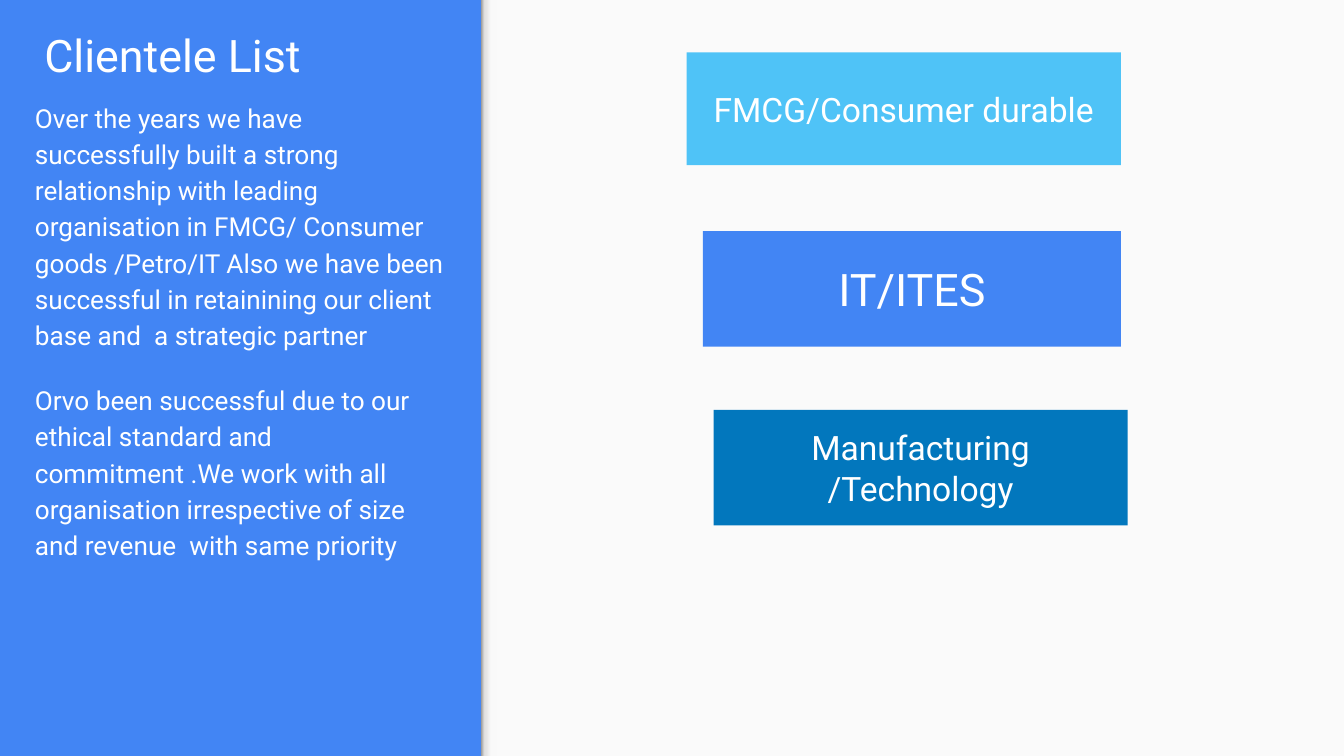
import copy
import pptx
import pptx.util
import pptx.dml.color
import pptx.enum.shapes
import pptx.enum.text
import pptx.oxml.ns

Inches = pptx.util.Inches
Pt = pptx.util.Pt
ALIGN = pptx.enum.text.PP_ALIGN
ANCHOR = pptx.enum.text.MSO_ANCHOR
qn = pptx.oxml.ns.qn


def color(code):
    return pptx.dml.color.RGBColor.from_string(code)


def write(shape, lines, size, align, anchor):
    frame = shape.text_frame
    frame.word_wrap = True
    frame.auto_size = pptx.enum.text.MSO_AUTO_SIZE.NONE
    frame.vertical_anchor = anchor
    frame.margin_left = frame.margin_right = Inches(0.1)
    frame.margin_top = frame.margin_bottom = Inches(0.1)
    frame.text = "\n".join(lines)
    for para in frame.paragraphs:
        para.alignment = align
        para.space_before = Pt(0)
        para.font.size = Pt(size)
        para.font.name = "Roboto"
        para.font.color.rgb = color("FFFFFF")


wide = 10
tall = wide * 9 / 16
deck = pptx.Presentation()
deck.slide_width = Inches(wide)
deck.slide_height = Inches(tall)
slide = deck.slides.add_slide(deck.slide_layouts[1])
slide.background.fill.solid()
slide.background.fill.fore_color.rgb = color("4285F4")

title = slide.shapes.title
title.left, title.top = Inches(0.23), Inches(0.38)
title.width, title.height = Inches(3.28), Inches(0.33)
write(title, ["Clientele List"], 24, ALIGN.LEFT, ANCHOR.BOTTOM)

body = slide.placeholders[1]
body.left, body.top = Inches(0.16), Inches(0.63)
body.width, body.height = Inches(3.28), Inches(5)
story = [
    "Over the years we have successfully built a strong relationship with leading "
    "organisation in FMCG/ Consumer goods /Petro/IT Also we have been successful in "
    "retainining our client  base and  a strategic partner",
    "Orvo been successful due to our  ethical standard and commitment .We work with all "
    "organisation irrespective of size and revenue  with same priority",
]
write(body, story, 14, ALIGN.LEFT, ANCHOR.TOP)
for para in body.text_frame.paragraphs:
    para.line_spacing = 1.15
    para.space_after = Pt(16)
    props = para._p.get_or_add_pPr()
    props.set("marL", "0")
    props.set("indent", "0")
    bullet = props.makeelement(qn("a:buNone"), {})
    props.insert_element_before(bullet, "a:tabLst", "a:defRPr", "a:extLst")

blocks = [
    (3.58, 0, 6.42, tall, "FAFAFA", "", 18),
    (3.58, 0, 0.12, tall, "999999", "", 18),
    (5.11, 0.39, 3.23, 0.84, "4FC3F7", "FMCG/Consumer durable", 18),
    (5.23, 1.72, 3.11, 0.86, "4285F4", "IT/ITES", 24),
    (5.31, 3.05, 3.08, 0.86, "0277BD", "Manufacturing /Technology", 18),
]
shapes = []
for left, top, width, height, paint, label, size in blocks:
    block = slide.shapes.add_shape(
        pptx.enum.shapes.MSO_SHAPE.RECTANGLE,
        Inches(left), Inches(top), Inches(width), Inches(height))
    block.shadow.inherit = False
    block.line.fill.background()
    block.fill.solid()
    block.fill.fore_color.rgb = color(paint)
    if label:
        write(block, [label], size, ALIGN.CENTER, ANCHOR.MIDDLE)
    shapes.append(block)

edge = shapes[1]
edge.fill.gradient()
edge.fill.gradient_angle = 0
stops = edge._element.spPr.find(".//" + qn("a:gsLst"))
for count in range(2):
    stops.append(copy.deepcopy(stops[0]))
shades = [(0, "999999"), (0.2, "DEDEDE"), (0.64, "F9F9F9"), (1, "F9F9F9")]
for stop, (place, shade) in zip(edge.fill.gradient_stops, shades):
    stop.position = place
    stop.color.rgb = color(shade)

deck.save("out.pptx")
